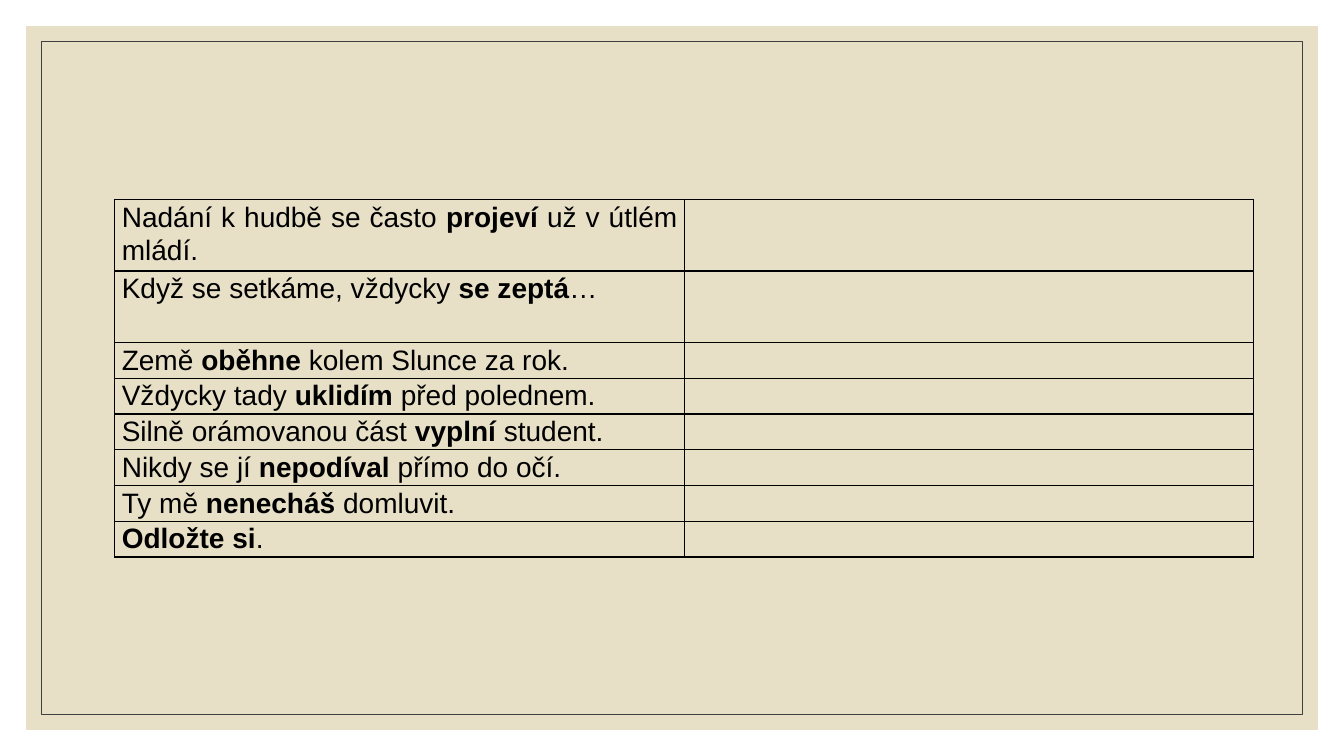
from lxml import etree
from pptx import Presentation
from pptx.dml.color import RGBColor
from pptx.enum.shapes import MSO_SHAPE
from pptx.enum.text import PP_ALIGN
from pptx.oxml.ns import qn
from pptx.util import Pt

RECT = MSO_SHAPE.RECTANGLE
JUSTIFY = PP_ALIGN.JUSTIFY
SAND = RGBColor(0xE7, 0xE0, 0xC7)
GRAY = RGBColor(0x40, 0x40, 0x40)
BLACK = RGBColor(0, 0, 0)

# Content: text before the verb, bold verb, text after it
LINES = [
    ("Nadání k hudbě se často ", "projeví", " už v útlém mládí."),
    ("Když se setkáme, vždycky ", "se zeptá", "…"),
    ("Země ", "oběhne", " kolem Slunce za rok."),
    ("Vždycky tady ", "uklidím", " před polednem."),
    ("Silně orámovanou část ", "vyplní", " student."),
    ("Nikdy se jí ", "nepodíval", " přímo do očí."),
    ("Ty mě ", "nenecháš", " domluvit."),
    ("", "Odložte si", "."),
]
TALL = 2  # the first rows are two lines high

# Measures in points
WIDE, HIGH = 960, 540
LEFT, TOP = 82, 142.5
COL, ROW = 406.8, 25.55
EDGE, FRAME = 18.7, 29.5


def add_panel(slide, inset):
    panel = slide.shapes.add_shape(
        RECT, Pt(inset), Pt(inset), Pt(WIDE - 2 * inset), Pt(HIGH - 2 * inset))
    panel.shadow.inherit = False
    return panel


def add_border(cell):
    props = cell._tc.get_or_add_tcPr()
    for side in ("a:lnL", "a:lnR", "a:lnT", "a:lnB"):
        line = etree.SubElement(props, qn(side), w=str(Pt(1)))
        fill = etree.SubElement(line, qn("a:solidFill"))
        etree.SubElement(fill, qn("a:srgbClr"), val=str(BLACK))


def write_line(cell, parts):
    para = cell.text_frame.paragraphs[0]
    para.alignment = JUSTIFY
    para.line_spacing = 1.07
    for i, part in enumerate(parts):
        if part:
            run = para.add_run()
            run.text = part
            font = run.font
            font.name, font.size, font.bold = "Arial", Pt(20), i == 1
            font.color.rgb = BLACK


def main():
    prs = Presentation()
    prs.slide_width, prs.slide_height = Pt(WIDE), Pt(HIGH)
    slide = prs.slides.add_slide(prs.slide_layouts[6])

    # Sand background and thin frame
    back = add_panel(slide, EDGE)
    back.fill.solid()
    back.fill.fore_color.rgb = SAND
    back.line.fill.background()
    frame = add_panel(slide, FRAME)
    frame.fill.background()
    frame.line.color.rgb = GRAY
    frame.line.width = Pt(0.5)

    # Table of sentences with an empty answer column
    count = len(LINES)
    table = slide.shapes.add_table(
        count, 2, Pt(LEFT), Pt(TOP), Pt(2 * COL), Pt((count + TALL) * ROW)).table
    table.first_row = table.horz_banding = False
    for col in table.columns:
        col.width = Pt(COL)
    for i, (row, parts) in enumerate(zip(table.rows, LINES)):
        row.height = Pt(ROW * (2 if i < TALL else 1))
        for cell in row.cells:
            cell.margin_left = cell.margin_right = Pt(5)
            cell.margin_top = cell.margin_bottom = 0
            add_border(cell)
            cell.fill.background()
        write_line(row.cells[0], parts)

    prs.save("out.pptx")


if __name__ == "__main__":
    main()
